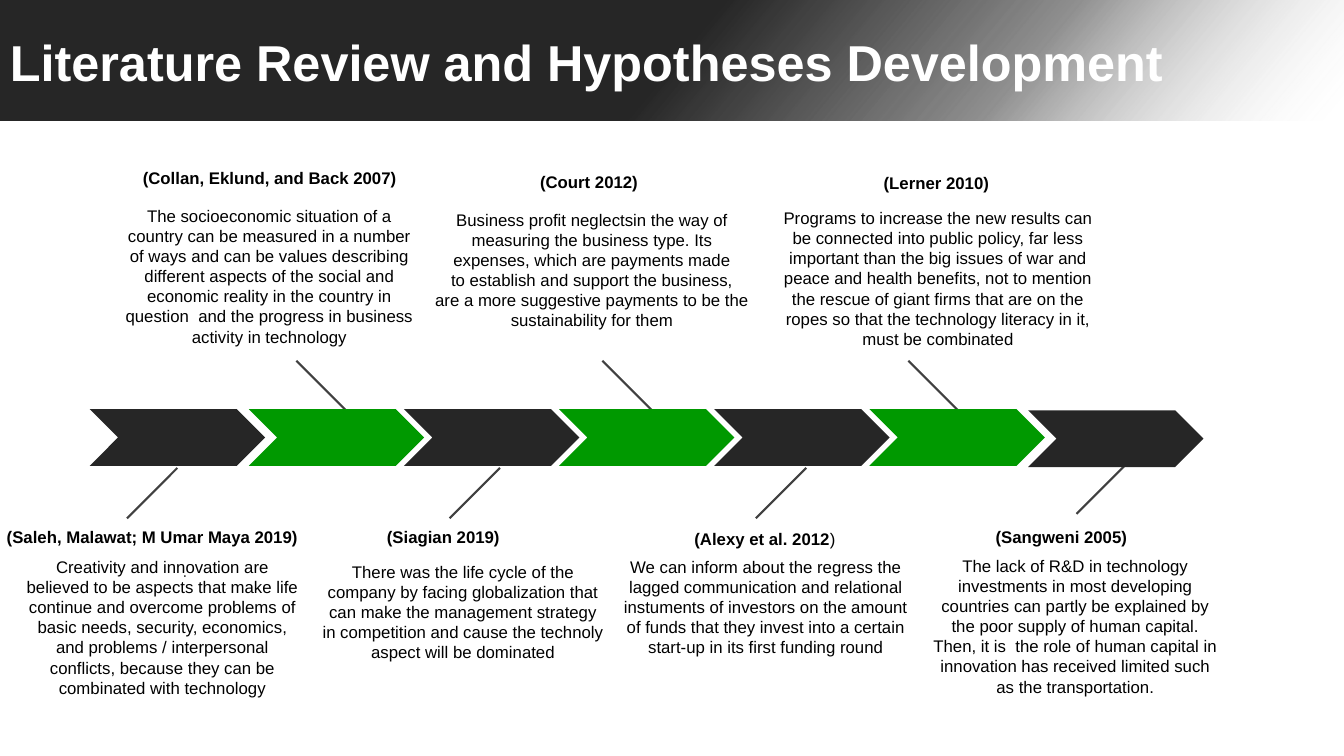
import pptx
import pptx.util
import pptx.dml.color
import pptx.enum.shapes
import pptx.enum.text
import pptx.oxml
import pptx.oxml.ns
import lxml.etree

Cm = pptx.util.Cm
Pt = pptx.util.Pt
RGB = pptx.dml.color.RGBColor.from_string
SHAPE = pptx.enum.shapes.MSO_SHAPE
ALIGN = pptx.enum.text.PP_ALIGN
ANCHOR = pptx.enum.text.MSO_ANCHOR
COLORS = {"dark": "262626", "green": "009900", "line": "404040", "text": "000000", "white": "FFFFFF"}

prs = pptx.Presentation()
prs.slide_width, prs.slide_height = Cm(33.87), Cm(19.05)
s = prs.slides.add_slide(prs.slide_layouts[6])


def add_text(paragraphs, x, y, w, h, size=12, color="text", bold=False,
             align=ALIGN.LEFT, anchor=ANCHOR.TOP, spacing=None):
    tf = s.shapes.add_textbox(Cm(x), Cm(y), Cm(w), Cm(h)).text_frame
    tf.word_wrap = True
    tf.vertical_anchor = anchor
    for i, runs in enumerate(paragraphs):
        p = tf.paragraphs[0] if i == 0 else tf.add_paragraph()
        p.alignment = align
        p.line_spacing = spacing
        for j, text in enumerate(runs if isinstance(runs, tuple) else (runs,)):
            r = p.add_run()
            r.text = text
            r.font.name = "Arial"
            r.font.size = Pt(size)
            r.font.bold = bold and j == 0
            r.font.color.rgb = RGB(COLORS[color])


banner = s.shapes.add_shape(SHAPE.RECTANGLE, 0, 0, prs.slide_width, Cm(3.05))
banner.shadow.inherit = False
banner.line.fill.background()
banner.fill.gradient()
grad = banner.fill._xPr.find(pptx.oxml.ns.qn("a:gradFill"))
stops = [(0, "white", 0), (25, "dark", 50), (50, "dark", 100), (100, "dark", 100)]
gs = "".join(
    f'<a:gs pos="{pos * 1000}"><a:srgbClr val="{COLORS[c]}"><a:alpha val="{alpha * 1000}"/></a:srgbClr></a:gs>'
    for pos, c, alpha in stops)
grad.getparent().replace(grad, pptx.oxml.parse_xml(
    f'<a:gradFill {pptx.oxml.ns.nsdecls("a")} rotWithShape="1"><a:gsLst>{gs}</a:gsLst>'
    f'<a:lin ang="{220 * 60000}" scaled="0"/></a:gradFill>'))

add_text(["Literature Review and Hypotheses Development"], 0, 0.64, 33.05, 2,
         size=36, color="white", bold=True, anchor=ANCHOR.MIDDLE, spacing=0.9)

upper = [(7.47 + 7.71 * i, 9.09, 1.27) for i in range(3)]
lower = [(x, y, -1.27) for x, y in [(3.2, 13.06), (11.33, 13.06), (19.05, 13.06), (27.13, 12.95)]]
for x, y, rise in upper + lower:
    c = s.shapes.add_connector(pptx.enum.shapes.MSO_CONNECTOR.STRAIGHT,
                               Cm(x), Cm(y), Cm(x + 1.27), Cm(y + rise))
    c.line.color.rgb = RGB(COLORS["line"])
    c.line.width = Pt(1.5)
    lxml.etree.SubElement(c._element.spPr, pptx.oxml.ns.qn("a:effectLst"))

chevrons = [(2.26, 10.31)] + [(6.27 + 3.91 * i, 10.31) for i in range(5)] + [(25.91, 10.34)]
for i, (x, y) in enumerate(chevrons):
    sp = s.shapes.add_shape(SHAPE.CHEVRON, Cm(x), Cm(y), Cm(4.42), Cm(1.43))
    sp.shadow.inherit = False
    sp.fill.solid()
    sp.fill.fore_color.rgb = RGB(COLORS["green" if i % 2 else "dark"])
    sp.line.fill.background()

add_text(["."], 2.11, 14, 5.11, 0.76, color="line", align=ALIGN.CENTER)

studies = [
    ("(Saleh, Malawat; M Umar Maya 2019)", (-0.08, 13.15, 8.2),
     ["Creativity and innovation are believed to be aspects that make life continue and overcome "
      "problems of basic needs, security, economics, and problems / interpersonal conflicts, "
      "because they can be combinated with technology"], (0.36, 13.9, 7.47, 3.84)),
    ("(Collan, Eklund, and Back 2007)", (3.35, 4.09, 7.3),
     ["The socioeconomic situation of a country can be measured in a number of ways and can be "
      "values describing different aspects of the social and economic reality in the country in "
      "question  and the progress in business activity in technology"], (2.84, 5.05, 7.9, 3.84)),
    ("(Siagian 2019)", (9.5, 13.16, 4),
     ["There was the life cycle of the",
      "company by facing globalization that",
      "can make the management strategy",
      "in competition and cause the technoly aspect will be dominated"], (7.44, 14.02, 8.46, 2.82)),
    ("(Court 2012)", (13.36, 4.2, 4),
     ["Business profit neglectsin the way of measuring the business type. Its expenses, which are "
      "payments made",
      "to establish and support the business,",
      "are a more suggestive payments to be the sustainability for them"], (10.69, 5.15, 8.46, 3.33)),
    (("(Alexy et al. 2012", ")"), (17.25, 13.2, 5),
     ["We can inform about the regress the lagged communication and relational instuments of "
      "investors on the amount of funds that they invest into a certain start-up in its first "
      "funding round"], (15.39, 13.9, 7.82, 2.82)),
    ("(Lerner 2010)", (22.02, 4.22, 4),
     ["Programs to increase the new results can be connected into public policy, far less important "
      "than the big issues of war and peace and health benefits, not to mention the rescue of giant "
      "firms that are on the ropes so that the technology literacy in it, must be combinated"],
     (19.41, 5.11, 8.46, 3.84)),
    ("(Sangweni 2005)", (24.84, 13.16, 5.49),
     ["The lack of R&D in technology investments in most developing countries can partly be "
      "explained by the poor supply of human capital. Then, it is  the role of human capital in "
      "innovation has received limited such as the transportation."], (23.19, 13.87, 7.82, 3.84)),
]
for citation, citation_box, finding, finding_box in studies:
    add_text([citation], *citation_box, 0.76, bold=True)
    add_text(finding, *finding_box, align=ALIGN.CENTER)

prs.save("out.pptx")
